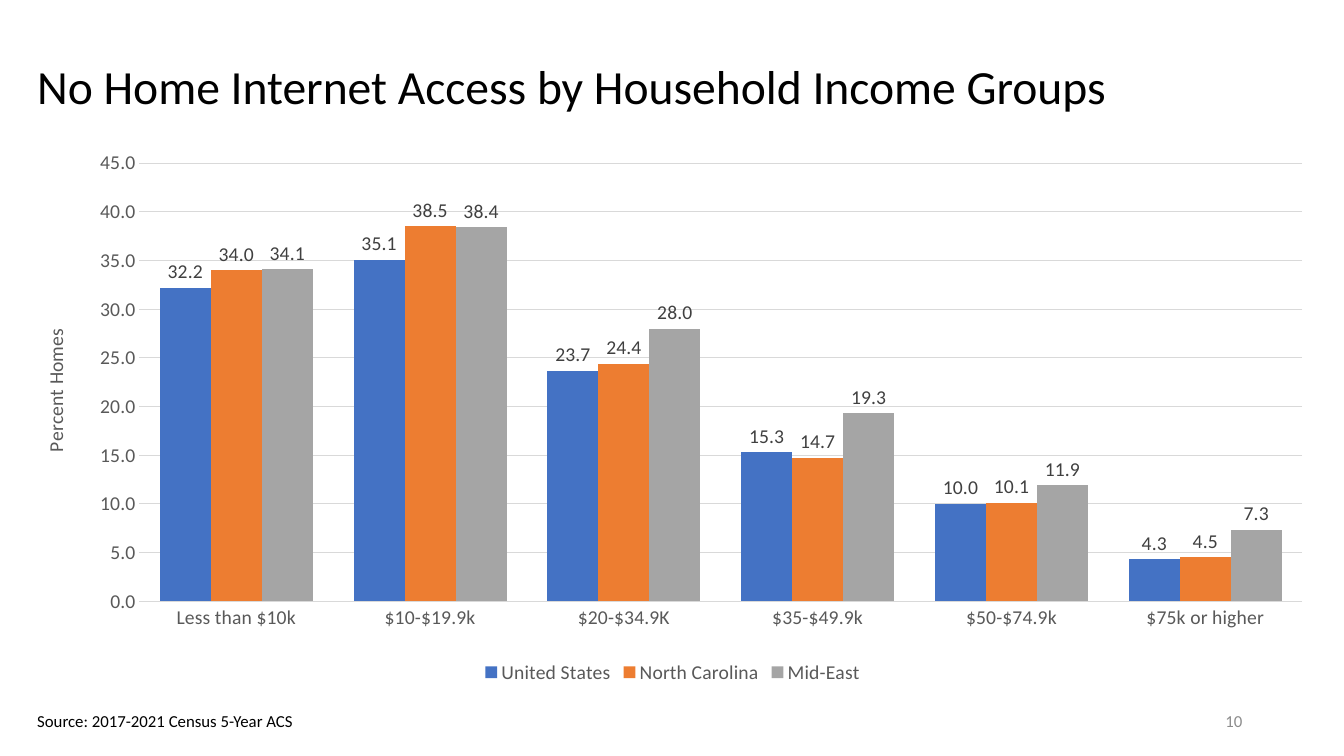
from pptx import Presentation, oxml, util as u
from pptx.chart.data import CategoryChartData
from pptx.dml.color import RGBColor
from pptx.enum import chart as c, text as t
from pptx.oxml import ns

WIDTH, HEIGHT = 13.33, 7.5
MARGIN = 0.27
FONT = "Calibri"
COLORS = {
    "black": "000000", "page number": "8C8C8C", "axis": "595959",
    "label": "404040", "grid": "D9D9D9",
}
INCOME_GROUPS = ["Less than $10k", "$10-$19.9k", "$20-$34.9K",
                 "$35-$49.9k", "$50-$74.9k", "$75k or higher"]
REGIONS = {
    "United States": ("4472C4", [32.2, 35.1, 23.7, 15.3, 10, 4.3]),
    "North Carolina": ("ED7D31", [34, 38.5, 24.4, 14.7, 10.1, 4.5]),
    "Mid-East": ("A5A5A5", [34.1, 38.4, 28, 19.3, 11.9, 7.3]),
}
NUMBER_FORMAT = "#,##0.0"
PLOT_SHARES = {"x": 0.087, "y": 0.035, "w": 0.901, "h": 0.805}


def color(name):
    return RGBColor.from_string(COLORS[name])


def style_font(font, size, color_name):
    font.name = FONT
    font.size = u.Pt(size)
    font.bold = False
    font.color.rgb = color(color_name)


def add_text(slide, box, words, size, color_name="black", align=t.PP_ALIGN.LEFT,
             anchor=t.MSO_ANCHOR.MIDDLE, wrap=True, line_spacing=None):
    shape = slide.shapes.add_textbox(*map(u.Inches, box))
    frame = shape.text_frame
    frame.word_wrap = wrap
    frame.vertical_anchor = anchor
    paragraph = frame.paragraphs[0]
    paragraph.alignment = align
    paragraph.line_spacing = line_spacing
    run = paragraph.add_run()
    run.text = words
    style_font(run.font, size, color_name)


def set_plot_layout(chart):
    """Fix the inner plot area as shares of the chart."""
    plot_area = chart._chartSpace.chart.plotArea
    for layout in plot_area.findall(ns.qn("c:layout")):
        plot_area.remove(layout)
    shares = "".join(f'<c:{side} val="{share}"/>' for side, share in PLOT_SHARES.items())
    plot_area.insert(0, oxml.parse_xml(
        f'<c:layout {ns.nsdecls("c")}><c:manualLayout><c:layoutTarget val="inner"/>'
        f'<c:xMode val="edge"/><c:yMode val="edge"/>{shares}</c:manualLayout></c:layout>'))


def style_axes(chart):
    for axis in (chart.category_axis, chart.value_axis):
        axis.major_tick_mark = axis.minor_tick_mark = c.XL_TICK_MARK.NONE
        style_font(axis.tick_labels.font, 14, "axis")
    values = chart.value_axis
    values.minimum_scale, values.maximum_scale, values.major_unit = 0, 45, 5
    values.tick_labels.number_format = NUMBER_FORMAT
    values.tick_labels.number_format_is_linked = False
    values.format.line.fill.background()
    values.has_major_gridlines = True
    for line in (chart.category_axis.format.line, values.major_gridlines.format.line):
        line.color.rgb = color("grid")
        line.width = u.Pt(0.75)
    title = values.axis_title.text_frame
    title.text = "Percent Homes"
    style_font(title.paragraphs[0].runs[0].font, 14, "axis")


def add_income_chart(slide, box):
    data = CategoryChartData(number_format=NUMBER_FORMAT)
    data.categories = INCOME_GROUPS
    for region, (_, percents) in REGIONS.items():
        data.add_series(region, percents)
    chart = slide.shapes.add_chart(
        c.XL_CHART_TYPE.COLUMN_CLUSTERED, *map(u.Inches, box), data).chart
    style_font(chart.font, 14, "black")
    chart.has_title = False
    style_axes(chart)
    set_plot_layout(chart)

    # Columns and their labels
    plot = chart.plots[0]
    plot.gap_width, plot.overlap = 80, 0
    plot.vary_by_categories = False
    for series, (fill, _) in zip(plot.series, REGIONS.values()):
        series.format.fill.solid()
        series.format.fill.fore_color.rgb = RGBColor.from_string(fill)
        labels = series.data_labels
        labels.show_value = True
        labels.position = c.XL_LABEL_POSITION.OUTSIDE_END
        labels.number_format = NUMBER_FORMAT
        labels.number_format_is_linked = False
        style_font(labels.font, 14, "label")

    # Legend
    chart.has_legend = True
    chart.legend.position = c.XL_LEGEND_POSITION.BOTTOM
    chart.legend.include_in_layout = False
    style_font(chart.legend.font, 14, "axis")


def add_footer(slide, box):
    left, top, width, height = box
    add_text(slide, (left, top + 0.05, 2.78, 0.3), "Source: 2017-2021 Census 5-Year ACS",
             12, anchor=t.MSO_ANCHOR.TOP, wrap=False)
    add_text(slide, (left + width - 3, top, 3, height), "10", 12, "page number",
             align=t.PP_ALIGN.RIGHT)


def main():
    presentation = Presentation()
    presentation.slide_width = u.Inches(WIDTH)
    presentation.slide_height = u.Inches(HEIGHT)
    slide = presentation.slides.add_slide(presentation.slide_layouts[6])
    add_text(slide, (MARGIN, 0.34, 12.76, 1.09),
             "No Home Internet Access by Household Income Groups", 34, line_spacing=0.9)
    add_income_chart(slide, (MARGIN, 1.43, 12.8, 5.4))
    add_footer(slide, (MARGIN, 6.95, 12.15, 0.4))
    presentation.save("out.pptx")


if __name__ == "__main__":
    main()
